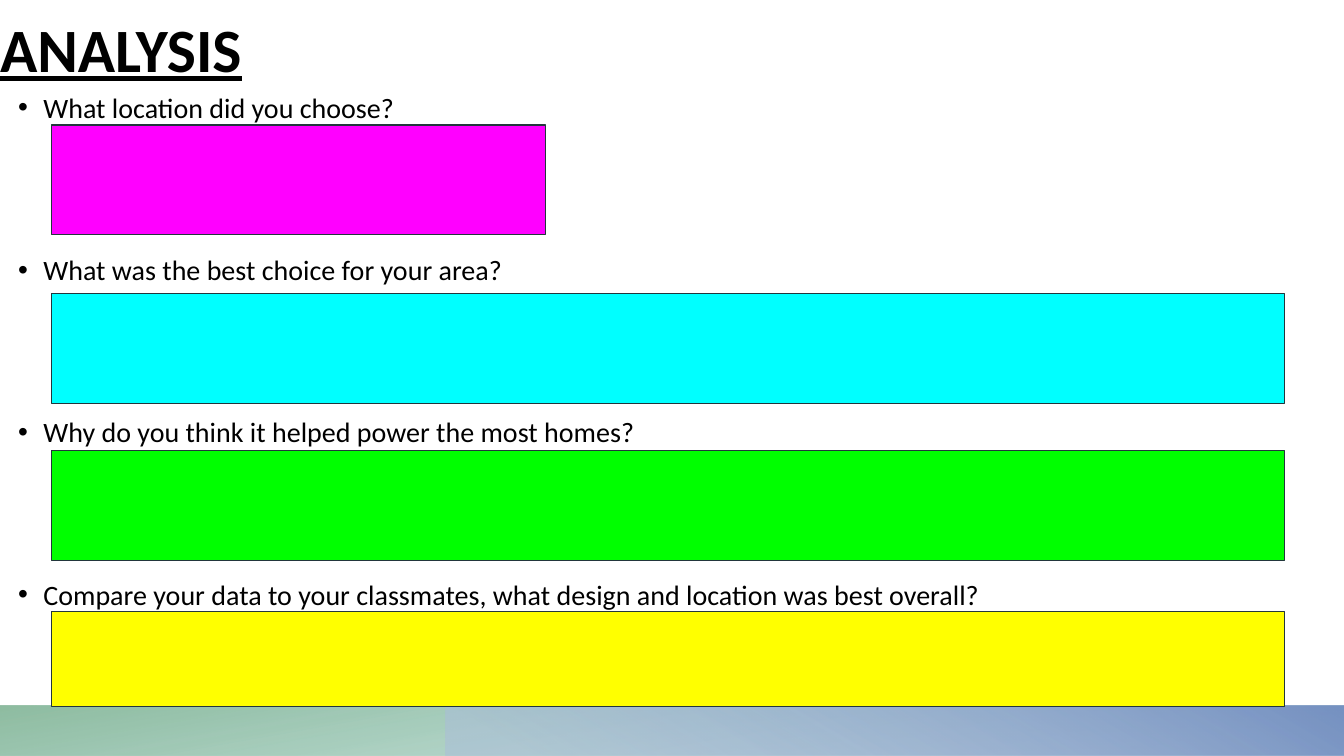
from dataclasses import dataclass

from lxml import etree
from pptx import Presentation
from pptx.dml.color import RGBColor
from pptx.enum import shapes, text
from pptx.oxml import ns
from pptx.util import Inches, Pt

TITLE = "ANALYSIS"
QUESTIONS = [
    "What location did you choose?",
    "What was the best choice for your area?",
    "Why do you think it helped power the most homes?",
    "Compare your data to your classmates, what design and location was best overall?",
]
ANSWER_LEFT = 0.51
ANSWERS = [
    (1.24, 4.9, 1.09, "FF00FF"),
    (2.91, 12.23, 1.09, "00FFFF"),
    (4.47, 12.23, 1.09, "00FF00"),
    (6.07, 12.23, 0.94, "FFFF00"),
]
BANDS = [
    (0, 13.33, 180, 100, [(0, "6BB0A2", 28), (14, "6BB0A2", 28), (100, "7BB190", 85)]),
    (4.42, 8.92, 0, 240, [(0, "ABBDDA", 55), (9, "ABBDDA", 55),
                          (99, "7692C2", 100), (100, "7692C2", 100)]),
]


@dataclass(frozen=True)
class Theme:
    font: str = "Calibri"
    ink: str = "000000"
    outline: str = "22363C"
    title_size: int = 44
    body_size: int = 20
    question_gap: float = 87.1


THEME = Theme()


def add_rectangle(slide, left, top, width, height):
    """Add a plain rectangle measured in inches."""
    shape = slide.shapes.add_shape(
        shapes.MSO_SHAPE.RECTANGLE, Inches(left), Inches(top), Inches(width), Inches(height))
    shape.shadow.inherit = False
    return shape


def add_band(slide, left, width, rotation, angle, stops):
    """Add a mirrored footer band with a translucent gradient."""
    band = add_rectangle(slide, left, 7, width, 0.5)
    band.rotation = rotation
    band.line.fill.background()
    band.fill.gradient()
    properties = band._element.spPr
    properties.find(ns.qn("a:xfrm")).set("flipH", "1")
    gradient = properties.find(ns.qn("a:gradFill"))
    for child in list(gradient):
        gradient.remove(child)
    stop_list = etree.SubElement(gradient, ns.qn("a:gsLst"))
    for position, color, opacity in stops:
        stop = etree.SubElement(stop_list, ns.qn("a:gs"), pos=str(position * 1000))
        tint = etree.SubElement(stop, ns.qn("a:srgbClr"), val=color)
        etree.SubElement(tint, ns.qn("a:alpha"), val=str(opacity * 1000))
    etree.SubElement(gradient, ns.qn("a:lin"), ang=str(angle * 60000), scaled="0")


def place(placeholder, left, top, width, height, anchor):
    """Move a placeholder and return its text frame without insets."""
    placeholder.left, placeholder.top = Inches(left), Inches(top)
    placeholder.width, placeholder.height = Inches(width), Inches(height)
    frame = placeholder.text_frame
    frame.margin_left = frame.margin_right = frame.margin_top = frame.margin_bottom = 0
    frame.auto_size = text.MSO_AUTO_SIZE.NONE
    frame.word_wrap = True
    frame.vertical_anchor = anchor
    return frame


def add_run(paragraph, words, size):
    """Write one run in the theme font and return its font."""
    paragraph.alignment = text.PP_ALIGN.LEFT
    run = paragraph.add_run()
    run.text = words
    run.font.name = THEME.font
    run.font.size = Pt(size)
    run.font.color.rgb = RGBColor.from_string(THEME.ink)
    return run.font


def add_bullet(paragraph):
    """Give a paragraph a hanging round bullet."""
    properties = paragraph._p.get_or_add_pPr()
    properties.set("marL", str(Inches(0.25)))
    properties.set("indent", str(-Inches(0.25)))
    color = etree.SubElement(properties, ns.qn("a:buClr"))
    etree.SubElement(color, ns.qn("a:srgbClr"), val=THEME.ink)
    etree.SubElement(properties, ns.qn("a:buFont"), typeface="Arial")
    etree.SubElement(properties, ns.qn("a:buChar"), char="•")


def main():
    """Build the analysis slide."""
    presentation = Presentation()
    presentation.slide_width, presentation.slide_height = Inches(13.33), Inches(7.5)
    slide = presentation.slides.add_slide(presentation.slide_layouts[1])

    for band in BANDS:
        add_band(slide, *band)

    title = place(slide.shapes.title, 0, 0, 11.2, 0.84, text.MSO_ANCHOR.BOTTOM)
    title_font = add_run(title.paragraphs[0], TITLE, THEME.title_size)
    title_font.bold = title_font.underline = True

    body = place(slide.placeholders[1], 0.18, 0.83, 11.46, 6.47, text.MSO_ANCHOR.TOP)
    for index, question in enumerate(QUESTIONS):
        paragraph = body.add_paragraph() if index else body.paragraphs[0]
        paragraph.line_spacing = 1.2
        paragraph.space_before = Pt(THEME.question_gap if index else 0)
        paragraph.space_after = Pt(0)
        add_bullet(paragraph)
        add_run(paragraph, question, THEME.body_size)

    for top, width, height, color in ANSWERS:
        answer = add_rectangle(slide, ANSWER_LEFT, top, width, height)
        answer.fill.solid()
        answer.fill.fore_color.rgb = RGBColor.from_string(color)
        answer.line.color.rgb = RGBColor.from_string(THEME.outline)
        answer.line.width = Pt(0.75)

    presentation.save("out.pptx")


if __name__ == "__main__":
    main()
